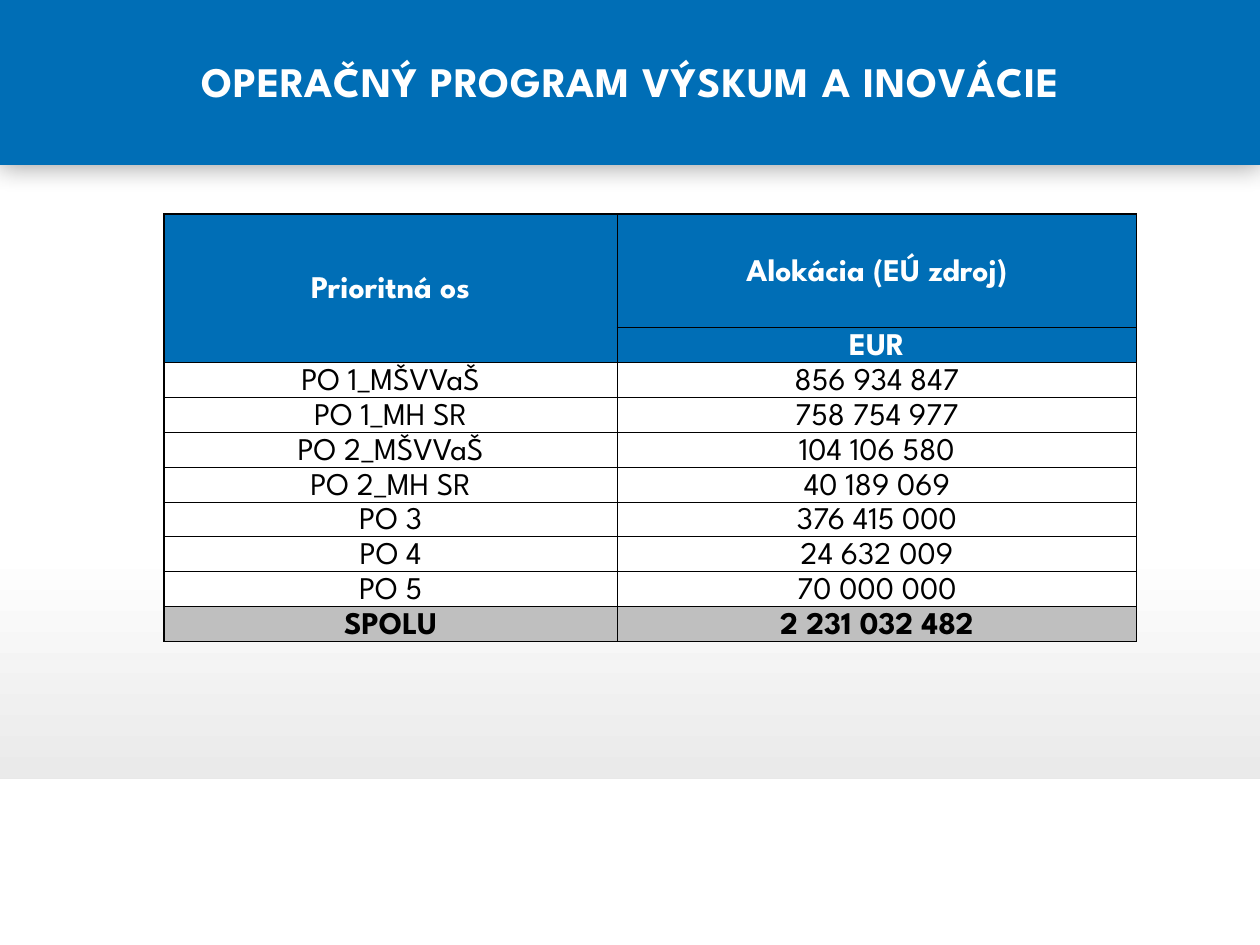
from dataclasses import dataclass

import pptx
import pptx.dml.color
import pptx.enum.shapes
import pptx.enum.text
import pptx.oxml
import pptx.oxml.ns
import pptx.util

Inches = pptx.util.Inches
Pt = pptx.util.Pt
RGBColor = pptx.dml.color.RGBColor
MIDDLE = pptx.enum.text.MSO_ANCHOR.MIDDLE

BLUE = RGBColor(0x00, 0x6E, 0xB6)
WHITE = RGBColor(0xFF, 0xFF, 0xFF)
BLACK = RGBColor(0x00, 0x00, 0x00)
GREY = RGBColor(0xBF, 0xBF, 0xBF)
PALE_GREY = RGBColor(0xD9, 0xD9, 0xD9)
FONT = "League Spartan"
THIN, THICK = 0.5, 1


@dataclass(frozen=True)
class RowStyle:
    fill: RGBColor
    color: RGBColor
    bold: bool


@dataclass(frozen=True)
class AllocationRow:
    axis: str
    amount: str
    style: RowStyle
    height: float = 0.25
    top: float = THIN
    bottom: float = THIN


HEADER = RowStyle(BLUE, WHITE, True)
BODY = RowStyle(WHITE, BLACK, False)
TOTAL = RowStyle(GREY, BLACK, True)

ROWS = [
    AllocationRow("Prioritná os", "Alokácia (EÚ zdroj)", HEADER, 0.9, THICK, THICK),
    AllocationRow("", "EUR", HEADER, top=THICK, bottom=THICK),
    AllocationRow("PO 1_MŠVVaŠ", "856 934 847", BODY, top=THICK),
    AllocationRow("PO 1_MH SR", "758 754 977", BODY),
    AllocationRow("PO 2_MŠVVaŠ", "104 106 580", BODY),
    AllocationRow("PO 2_MH SR", "40 189 069", BODY),
    AllocationRow("PO 3", "376 415 000", BODY),
    AllocationRow("PO 4", "24 632 009", BODY),
    AllocationRow("PO 5", "70 000 000", BODY, bottom=THICK),
    AllocationRow("SPOLU", "2 231 032 482", TOTAL, top=THICK, bottom=THICK),
]
COLUMN_WIDTHS = [3.6, 4.12]


def write_text(frame, text: str, *, size: float, color: RGBColor, bold: bool = False,
               line_spacing: float = 1.0, tracking: float = 0) -> None:
    paragraph = frame.paragraphs[0]
    paragraph.alignment = pptx.enum.text.PP_ALIGN.CENTER
    paragraph.line_spacing = line_spacing
    run = paragraph.add_run()
    run.text = text
    run.font.name = FONT
    run.font.size = Pt(size)
    run.font.bold = bold
    run.font.color.rgb = color
    if tracking:
        run.font._element.set("spc", str(int(tracking * 100)))


def add_band(slide, top: float, height: float, fill: RGBColor):
    band = slide.shapes.add_shape(
        pptx.enum.shapes.MSO_SHAPE.RECTANGLE, 0, Inches(top), Inches(10), Inches(height))
    band.shadow.inherit = False
    band.fill.solid()
    band.fill.fore_color.rgb = fill
    band.line.fill.background()
    return band


def add_glow_shadow(shape, blur: float, opacity: int) -> None:
    effects = shape._element.spPr.find(pptx.oxml.ns.qn("a:effectLst"))
    effects.append(pptx.oxml.parse_xml(
        f'<a:outerShdw {pptx.oxml.ns.nsdecls("a")} blurRad="{Pt(blur)}" dist="0" dir="0">'
        f'<a:srgbClr val="{BLACK}"><a:alpha val="{opacity * 1000}"/></a:srgbClr>'
        '</a:outerShdw>'))


def set_borders(cell, top: float, bottom: float) -> None:
    widths = {"lnL": THICK, "lnR": THICK, "lnT": top, "lnB": bottom}
    properties = cell._tc.get_or_add_tcPr()
    for position, (side, width) in enumerate(widths.items()):
        properties.insert(position, pptx.oxml.parse_xml(
            f'<a:{side} {pptx.oxml.ns.nsdecls("a")} w="{Pt(width)}">'
            f'<a:solidFill><a:srgbClr val="{BLACK}"/></a:solidFill></a:{side}>'))


def fill_cell(cell, text: str, row: AllocationRow) -> None:
    cell.margin_left = cell.margin_right = cell.margin_top = cell.margin_bottom = 0
    cell.vertical_anchor = MIDDLE
    cell.fill.solid()
    cell.fill.fore_color.rgb = row.style.fill
    set_borders(cell, row.top, row.bottom)
    if text:
        write_text(cell.text_frame, text, size=18, color=row.style.color,
                   bold=row.style.bold, line_spacing=1.2)


def add_allocation_table(slide) -> None:
    table = slide.shapes.add_table(
        len(ROWS), len(COLUMN_WIDTHS), Inches(1.3), Inches(1.7),
        Inches(sum(COLUMN_WIDTHS)), Inches(sum(row.height for row in ROWS))).table
    table.first_row = table.horz_banding = False
    for column, width in zip(table.columns, COLUMN_WIDTHS):
        column.width = Inches(width)
    for index, row in enumerate(ROWS):
        table.rows[index].height = Inches(row.height)
        fill_cell(table.cell(index, 0), row.axis, row)
        fill_cell(table.cell(index, 1), row.amount, row)
    table.cell(0, 0).merge(table.cell(1, 0))


def main() -> None:
    presentation = pptx.Presentation()
    presentation.slide_width, presentation.slide_height = Inches(10), Inches(7.5)
    slide = presentation.slides.add_slide(presentation.slide_layouts[5])

    # Background: white fading to grey in the lower part
    backdrop = slide.background.fill
    backdrop.gradient()
    backdrop.gradient_angle = 270
    for stop, position, color in zip(backdrop.gradient_stops, (0.58, 1), (WHITE, PALE_GREY)):
        stop.position = position
        stop.color.rgb = color

    # Footer and header bands
    footer = add_band(slide, 6.19, 1.31, WHITE)
    footer.line.color.rgb = WHITE
    footer.line.width = Pt(0.85)
    header = add_band(slide, -0.03, 1.34, BLUE)
    add_glow_shadow(header, blur=15, opacity=40)

    # Title, brought in front of the header band
    title = slide.shapes.title
    header._element.addnext(title._element)
    title.left, title.top = Inches(0.67), Inches(0.13)
    title.width, title.height = Inches(8.67), Inches(1.02)
    title.text_frame.auto_size = pptx.enum.text.MSO_AUTO_SIZE.NONE
    title.text_frame.vertical_anchor = MIDDLE
    write_text(title.text_frame, "OPERAČNÝ PROGRAM VÝSKUM A INOVÁCIE",
               size=24, color=WHITE, bold=True, tracking=0.5)

    # Allocation by priority axis
    add_allocation_table(slide)
    presentation.save("out.pptx")


if __name__ == "__main__":
    main()
